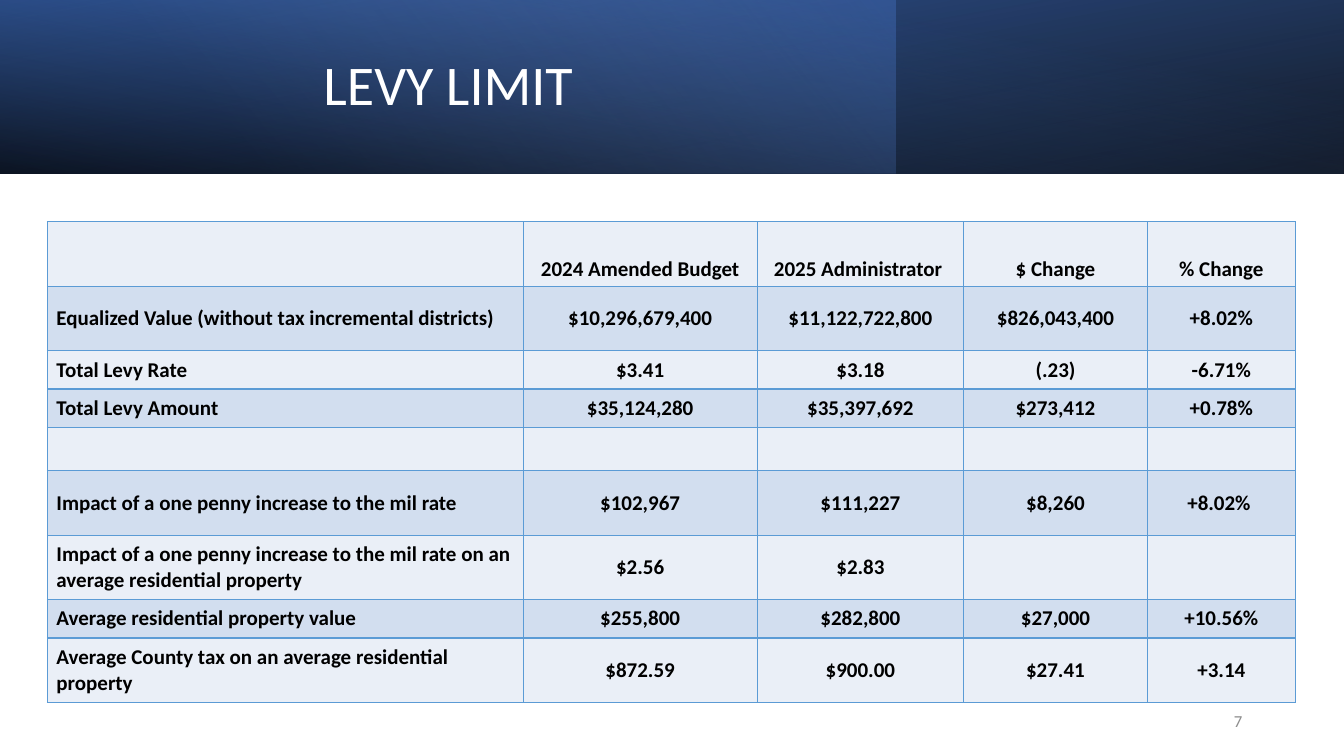
from lxml import etree
from pptx import Presentation
from pptx.dml.color import RGBColor
from pptx.enum import shapes, text
from pptx.oxml import parse_xml
from pptx.oxml.ns import nsdecls, qn
from pptx.util import Inches, Pt

WHITE = RGBColor(0xFF, 0xFF, 0xFF)
BLACK = RGBColor(0x00, 0x00, 0x00)
GREY = RGBColor(0x8C, 0x8C, 0x8C)
NAVY = RGBColor(0x2F, 0x55, 0x97)
BLUE = RGBColor(0x44, 0x72, 0xC4)
SKY = RGBColor(0x8F, 0xAA, 0xDC)
BORDER = RGBColor(0x5B, 0x9B, 0xD5)
BANDS = (RGBColor(0xEA, 0xEF, 0xF7), RGBColor(0xD2, 0xDE, 0xEF))

TITLE = "LEVY LIMIT"
PAGE_NUMBER = "7"
LEVY_ROWS = [
    ("", "2024 Amended Budget", "2025 Administrator ", "$ Change", "% Change"),
    ("Equalized Value (without tax incremental districts)",
     "$10,296,679,400", "$11,122,722,800", "$826,043,400", "+8.02%"),
    ("Total Levy Rate", "$3.41", "$3.18", "(.23)", "-6.71%"),
    ("Total Levy Amount", "$35,124,280", "$35,397,692", "$273,412", "+0.78%"),
    ("", "", "", "", ""),
    ("Impact of a one penny increase to the mil rate",
     "$102,967", "$111,227", "$8,260", "+8.02% "),
    ("Impact of a one penny increase to the mil rate on an average residential property",
     "$2.56", "$2.83", "", ""),
    ("Average residential property value", "$255,800", "$282,800", "$27,000", "+10.56%"),
    ("Average County tax on an average residential property",
     "$872.59", "$900.00", "$27.41", "+3.14"),
]
TALL, SHORT, GAP = 0.64, 0.38, 0.43
ROW_HEIGHTS = (TALL, TALL, SHORT, SHORT, GAP, TALL, TALL, SHORT, TALL)
COLUMN_WIDTHS = (4.72, 2.32, 2.05, 1.82, 1.47)

WIDTH, HEIGHT = 13.33, 7.5
BANNER_HEIGHT = 0.23 * HEIGHT
BANNER_LAYERS = [
    (1, 180, True, 100, [(0, BLACK, 96), (100, NAVY, 100)]),
    (2 / 3, 0, False, 140, [(0, BLUE, 41), (74, SKY, 0)]),
    (1, 0, True, 260, [(0, BLACK, 63), (78, BLUE, 15)]),
]

deck = Presentation()
deck.slide_width, deck.slide_height = Inches(WIDTH), Inches(HEIGHT)
slide = deck.slides.add_slide(deck.slide_layouts[6])


def write(frame, words, size, color, align, bold=False, spacing=1.0):
    paragraph = frame.paragraphs[0]
    paragraph.alignment = align
    paragraph.line_spacing = spacing
    paragraph.font.size = Pt(size)
    if words:
        run = paragraph.add_run()
        run.text = words
        run.font.name, run.font.size, run.font.bold = "Calibri", Pt(size), bold
        run.font.color.rgb = color


def add_label(words, left, top, width, height, **style):
    frame = slide.shapes.add_textbox(*map(Inches, (left, top, width, height))).text_frame
    frame.word_wrap = True
    frame.vertical_anchor = text.MSO_ANCHOR.MIDDLE
    write(frame, words, **style)


def add_banner_layer(share, rotation, flipped, angle, stops):
    layer = slide.shapes.add_shape(
        shapes.MSO_SHAPE.RECTANGLE, 0, 0, Inches(WIDTH * share), Inches(BANNER_HEIGHT))
    layer.shadow.inherit = False
    layer.line.fill.background()
    layer.rotation = rotation
    properties = layer.element.spPr
    if flipped:
        properties.find(qn("a:xfrm")).set("flipH", "1")
    stop_xml = "".join(
        f'<a:gs pos="{place * 1000}"><a:srgbClr val="{color}">'
        f'<a:alpha val="{opacity * 1000}"/></a:srgbClr></a:gs>'
        for place, color, opacity in stops)
    properties.find(qn("a:prstGeom")).addnext(parse_xml(
        f'<a:gradFill {nsdecls("a")} rotWithShape="1"><a:gsLst>{stop_xml}</a:gsLst>'
        f'<a:lin ang="{angle * 60000}" scaled="0"/></a:gradFill>'))


def add_borders(cell):
    properties = cell._tc.get_or_add_tcPr()
    for index, side in enumerate("LRTB"):
        line = etree.Element(qn(f"a:ln{side}"), w=str(Pt(1)))
        fill = etree.SubElement(line, qn("a:solidFill"))
        etree.SubElement(fill, qn("a:srgbClr"), val=str(BORDER))
        properties.insert(index, line)


def add_levy_table(left, top):
    table = slide.shapes.add_table(
        len(LEVY_ROWS), len(COLUMN_WIDTHS), Inches(left), Inches(top),
        Inches(sum(COLUMN_WIDTHS)), Inches(sum(ROW_HEIGHTS))).table
    for column, width in zip(table.columns, COLUMN_WIDTHS):
        column.width = Inches(width)
    for r, (values, height) in enumerate(zip(LEVY_ROWS, ROW_HEIGHTS)):
        table.rows[r].height = Inches(height)
        for c, value in enumerate(values):
            cell = table.cell(r, c)
            cell.fill.solid()
            cell.fill.fore_color.rgb = BANDS[r % 2]
            cell.margin_left = cell.margin_right = Inches(0.09)
            cell.margin_top = cell.margin_bottom = Inches(0.04)
            cell.vertical_anchor = text.MSO_ANCHOR.MIDDLE if r else text.MSO_ANCHOR.BOTTOM
            align = text.PP_ALIGN.CENTER if c else text.PP_ALIGN.LEFT
            write(cell.text_frame, value, 15, BLACK, align, bold=True)
            add_borders(cell)


for banner_layer in BANNER_LAYERS:
    add_banner_layer(*banner_layer)
add_label(TITLE, 1.91, 0.23, 5.07, 1.27, size=40, color=WHITE,
          align=text.PP_ALIGN.CENTER, spacing=0.9)
add_levy_table(0.47, 2.2)
add_label(PAGE_NUMBER, 9.42, 6.95, 3, 0.4, size=12, color=GREY, align=text.PP_ALIGN.RIGHT)
deck.save("out.pptx")
